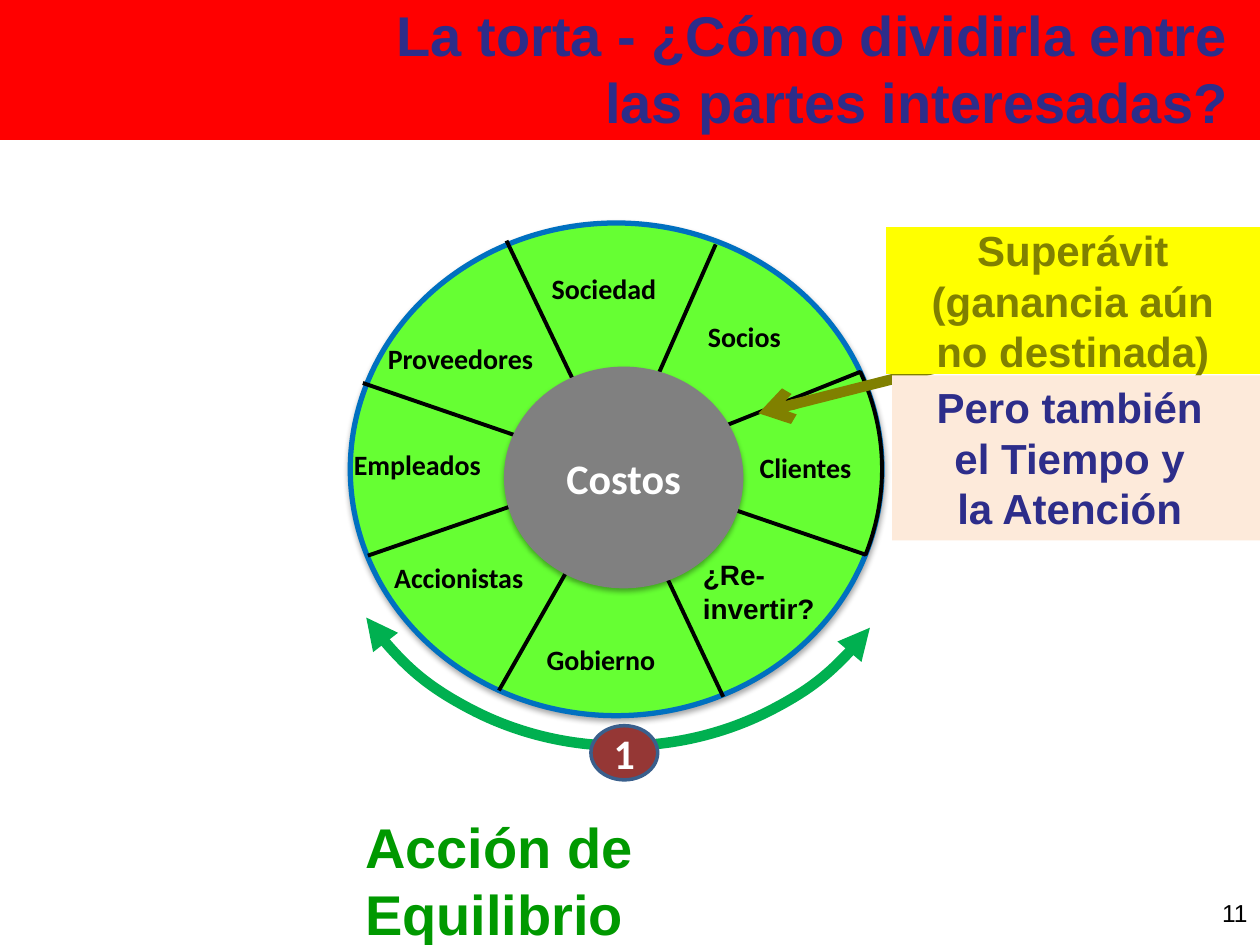
"""Build the stakeholder pie slide."""
from dataclasses import dataclass
from typing import Optional

from lxml.etree import SubElement
from pptx import Presentation
from pptx.dml.color import RGBColor
from pptx.enum.shapes import MSO_CONNECTOR as Connector, MSO_SHAPE as Shape
from pptx.enum.text import MSO_ANCHOR as Anchor, PP_ALIGN as Align
from pptx.oxml.ns import qn
from pptx.util import Inches, Pt

BLACK = RGBColor(0x00, 0x00, 0x00)
WHITE = RGBColor(0xFF, 0xFF, 0xFF)
RED = RGBColor(0xFF, 0x00, 0x00)
NAVY = RGBColor(0x2D, 0x2D, 0x8A)
LIME = RGBColor(0x66, 0xFF, 0x33)
BLUE = RGBColor(0x00, 0x70, 0xC0)
GREEN = RGBColor(0x00, 0xB0, 0x50)
DARK_GREEN = RGBColor(0x00, 0x99, 0x00)
GRAY = RGBColor(0x80, 0x80, 0x80)
OLIVE = RGBColor(0x80, 0x80, 0x00)
YELLOW = RGBColor(0xFF, 0xFF, 0x00)
PEACH = RGBColor(0xFD, 0xEA, 0xDA)
MAROON = RGBColor(0x95, 0x37, 0x35)
STEEL = RGBColor(0x3A, 0x5F, 0x8C)

Box = tuple[float, float, float, float]
Point = tuple[float, float]

PIE_BOX: Box = (2.78, 1.77, 4.22, 3.91)
HUB: Point = (4.89, 3.73)


@dataclass(frozen=True)
class Style:
    size: float
    color: RGBColor
    font: str = "Arial"
    bold: bool = True
    align: Align = Align.LEFT
    anchor: Anchor = Anchor.TOP
    margin_right: float = 0.1


@dataclass(frozen=True)
class Label:
    text: str
    box: Box
    style: Style


@dataclass(frozen=True)
class Spoke:
    start: Point
    end: Point = HUB
    width: float = 2.25


SLICE = Style(16, BLACK, "Calibri")
ROUND = Style(24, WHITE, "Calibri", align=Align.CENTER, anchor=Anchor.MIDDLE)

SPOKES = [
    Spoke((4.02, 1.91)),
    Spoke((2.88, 3.04)),
    Spoke((5.68, 1.94)),
    Spoke((2.92, 4.41)),
    Spoke((5.74, 5.53)),
    Spoke((6.84, 2.95), width=0.75),
]
LABELS = [
    Label("Sociedad", (4.28, 2.11, 1.2, 0.37), SLICE),
    Label("Proveedores", (2.98, 2.66, 1.56, 0.37), SLICE),
    Label("Empleados", (2.71, 3.5, 1.4, 0.37), SLICE),
    Label("Accionistas", (3.03, 4.4, 1.46, 0.37), SLICE),
    Label("Clientes", (5.93, 3.53, 1.07, 0.37), SLICE),
    Label("Socios", (5.52, 2.49, 0.94, 0.37), SLICE),
    Label("¿Re-\ninvertir?", (5.48, 4.38, 1.1, 0.64), Style(16, BLACK)),
]


def write(shape, text: str, style: Style) -> None:
    """Fill a shape with paragraphs (newline) and line breaks (vertical tab)."""
    frame = shape.text_frame
    frame.word_wrap = True
    frame.vertical_anchor = style.anchor
    frame.margin_right = Inches(style.margin_right)
    for index, content in enumerate(text.split("\n")):
        paragraph = frame.add_paragraph() if index else frame.paragraphs[0]
        paragraph.alignment = style.align
        for part_index, part in enumerate(content.split("\v")):
            if part_index:
                paragraph.add_line_break()
            run = paragraph.add_run()
            run.text = part
            run.font.name = style.font
            run.font.size = Pt(style.size)
            run.font.bold = style.bold
            run.font.color.rgb = style.color


def add_label(slide, label: Label) -> None:
    """Add a text box."""
    write(slide.shapes.add_textbox(*map(Inches, label.box)), label.text, label.style)


def add_figure(slide, kind: Shape, box: Box, fill: Optional[RGBColor] = None,
               line: Optional[RGBColor] = None, width: float = 1,
               adjustments: tuple[float, ...] = ()):
    """Add a preset shape with an optional fill and outline."""
    shape = slide.shapes.add_shape(kind, *map(Inches, box))
    shape.shadow.inherit = False
    for index, value in enumerate(adjustments):
        shape.adjustments[index] = value
    if fill is None:
        shape.fill.background()
    else:
        shape.fill.solid()
        shape.fill.fore_color.rgb = fill
    if line is None:
        shape.line.fill.background()
    else:
        shape.line.color.rgb = line
        shape.line.width = Pt(width)
    return shape


def add_line(slide, start: Point, end: Point, color: RGBColor, width: float):
    """Add a straight connector without a shadow."""
    line = slide.shapes.add_connector(Connector.STRAIGHT, *map(Inches, start + end))
    line.line.color.rgb = color
    line.line.width = Pt(width)
    SubElement(line._element.spPr, qn("a:effectLst"))
    return line


def add_arrowheads(shape, **ends: str) -> None:
    """Put arrowheads on a line, given as headEnd and tailEnd in that order."""
    for end, kind in ends.items():
        SubElement(shape.line._get_or_add_ln(), qn(f"a:{end}"), type=kind)


def add_shadow(shape) -> None:
    """Cast a soft shadow straight down."""
    effects = shape._element.spPr.find(qn("a:effectLst"))
    shadow = SubElement(effects, qn("a:outerShdw"), blurRad=str(Pt(3.1)),
                        dist=str(Pt(1.8)), dir="5400000", rotWithShape="0")
    color = SubElement(shadow, qn("a:srgbClr"), val=str(BLACK))
    SubElement(color, qn("a:alpha"), val="35000")


def add_pie(slide) -> None:
    """Draw the pie, its spokes and its slice labels."""
    add_shadow(add_figure(slide, Shape.OVAL, PIE_BOX, LIME, BLUE, 3))
    for spoke in SPOKES:
        add_line(slide, spoke.start, spoke.end, BLACK, spoke.width)
    add_figure(slide, Shape.PIE, PIE_BOX, LIME, BLACK, 2.25, (202.94, 11.33))
    for label in LABELS:
        add_label(slide, label)


def add_balance(slide) -> None:
    """Draw the balancing arc and its number badge."""
    arc = add_figure(slide, Shape.ARC, (2.55, 1.62, 4.77, 4.3), None, GREEN, 6,
                     (18.97, 90.5))
    add_arrowheads(arc, headEnd="triangle", tailEnd="triangle")
    badge = add_figure(slide, Shape.OVAL, (4.69, 5.76, 0.53, 0.43), MAROON, STEEL, 2)
    write(badge, "1", ROUND)


def add_notes_on_surplus(slide) -> None:
    """Draw the two boxes at the right."""
    callout = add_figure(slide, Shape.LINE_CALLOUT_1, (7.03, 1.8, 2.97, 1.17), YELLOW,
                         adjustments=(0.19, -0.08, 1.23, -0.64))
    write(callout, "Superávit (ganancia aún\nno destinada)",
          Style(24, OLIVE, align=Align.CENTER, anchor=Anchor.MIDDLE))
    remark = add_figure(slide, Shape.RECTANGLE, (7.08, 2.98, 2.92, 1.31), PEACH)
    write(remark, "Pero también\vel Tiempo y\vla Atención",
          Style(24, NAVY, align=Align.CENTER, margin_right=0.2))


def main() -> None:
    """Assemble and save the slide."""
    presentation = Presentation()
    presentation.slide_width, presentation.slide_height = Inches(10), Inches(7.5)
    slide = presentation.slides.add_slide(presentation.slide_layouts[6])
    add_pie(slide)
    add_balance(slide)
    arrow = add_line(slide, (7.71, 2.85), (6.02, 3.28), OLIVE, 6)
    add_arrowheads(arrow, tailEnd="arrow")
    banner = add_figure(slide, Shape.RECTANGLE, (0, -0.04, 10, 1.15), RED)
    write(banner, "La torta - ¿Cómo dividirla entre\vlas partes interesadas?",
          Style(32, NAVY, align=Align.RIGHT, anchor=Anchor.MIDDLE, margin_right=0.25))
    add_label(slide, Label("Acción de Equilibrio", (2.8, 6.4, 4.2, 0.63),
                           Style(32, DARK_GREEN)))
    add_notes_on_surplus(slide)
    add_line(slide, (4.91, 3.81), (3.96, 5.48), BLACK, 2.25)
    hub = add_figure(slide, Shape.OVAL, (4, 2.91, 1.9, 1.76), GRAY)
    add_shadow(hub)
    write(hub, "Costos", ROUND)
    add_label(slide, Label("Gobierno", (4.24, 5.05, 1.2, 0.37), SLICE))
    add_label(slide, Label("11", (7.67, 6.98, 2.33, 0.52),
                           Style(14, BLACK, bold=False, align=Align.RIGHT,
                                 anchor=Anchor.MIDDLE)))
    presentation.save("out.pptx")


if __name__ == "__main__":
    main()
